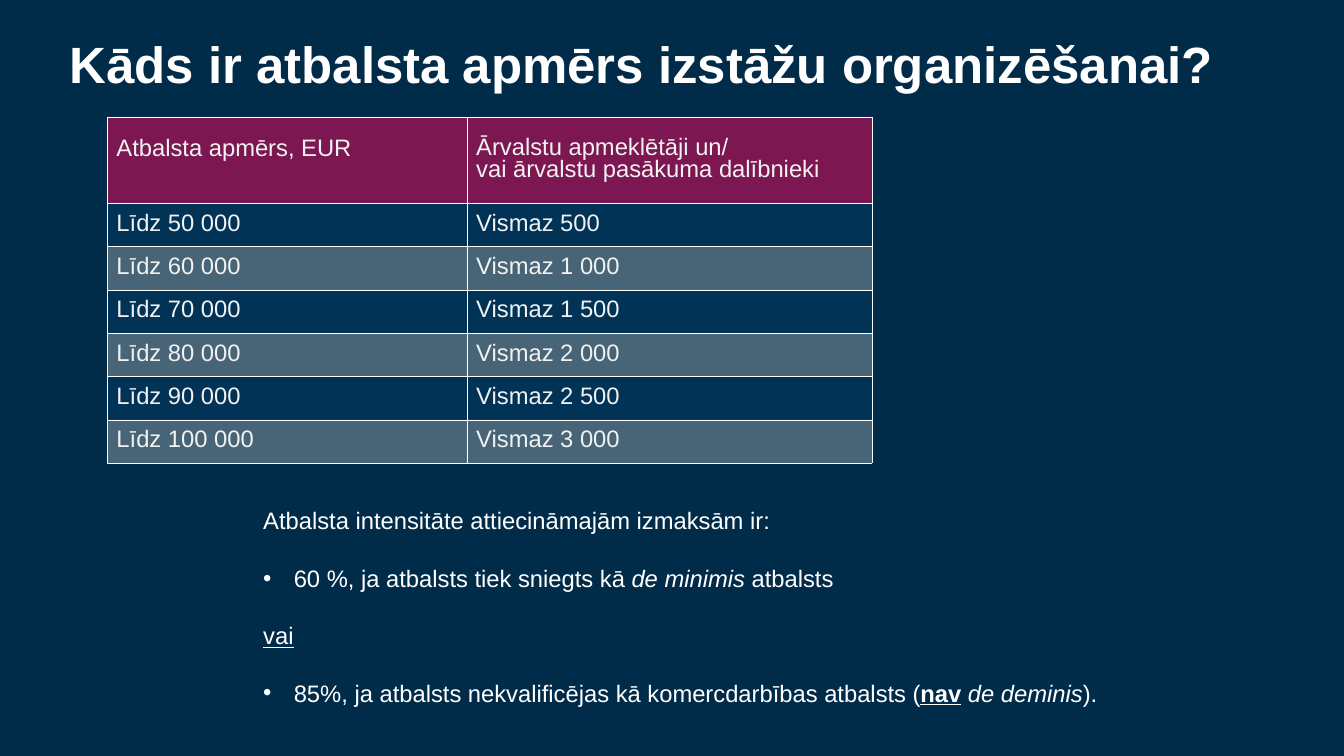
from pptx import Presentation
from pptx.dml.color import RGBColor as RGB
from pptx.enum.text import MSO_ANCHOR as Anchor, MSO_AUTO_SIZE as AutoSize
from pptx.oxml import parse_xml
from pptx.oxml.ns import nsdecls
from pptx.oxml.xmlchemy import OxmlElement
from pptx.util import Cm, Pt

FONT = "Arial"
COLORS = {
    "background": "002B49",
    "header": "7C1752",
    "row": "013356",
    "band": "EEECE1",
    "white": "FFFFFF",
    "cell_text": "F2F2F2",
}
HEADERS = ["Atbalsta apmērs, EUR", "Ārvalstu apmeklētāji un/\nvai ārvalstu pasākuma dalībnieki"]
SUPPORT_LEVELS = [
    ("Līdz 50 000", "Vismaz 500"),
    ("Līdz 60 000", "Vismaz 1 000"),
    ("Līdz 70 000", "Vismaz 1 500"),
    ("Līdz 80 000", "Vismaz 2 000"),
    ("Līdz 90 000", "Vismaz 2 500"),
    ("Līdz 100 000", "Vismaz 3 000"),
]
INTENSITY = [
    (False, [("Atbalsta intensitāte attiecināmajām izmaksām ir:", "")]),
    (True, [("60 %, ja atbalsts tiek sniegts kā ", ""), ("de minimis", "i"), (" atbalsts", "")]),
    (False, [("vai", "u")]),
    (True, [("85%, ja atbalsts nekvalificējas kā komercdarbības atbalsts (", ""),
            ("nav", "bu"), (" ", ""), ("de deminis", "i"), (").", "")]),
]


def rgb(name):
    return RGB.from_string(COLORS[name])


def style_font(font, size, color):
    font.name = FONT
    font.size = Pt(size)
    font.color.rgb = rgb(color)


def set_indent(p, left, first):
    pPr = p._p.get_or_add_pPr()
    pPr.set("marL", str(Cm(left)))
    pPr.set("indent", str(Cm(first)))
    return pPr


def add_textbox(s, left, top, width, height):
    sp = s.shapes.add_textbox(Cm(left), Cm(top), Cm(width), Cm(height))
    tf = sp.text_frame
    tf.word_wrap = True
    tf.auto_size = AutoSize.SHAPE_TO_FIT_TEXT
    return tf


def add_title(s, text):
    tf = add_textbox(s, 2.77, 1.93, 51.21, 2.16)
    tf.margin_left = tf.margin_right = tf.margin_top = tf.margin_bottom = Cm(0.13)
    tf.text = text
    p = tf.paragraphs[0]
    p.line_spacing = 0.7
    font = p.runs[0].font
    style_font(font, 60, "white")
    font.bold = True


def set_borders(cell):
    tcPr = cell._tc.get_or_add_tcPr()
    for i, side in enumerate("LRTB"):
        tcPr.insert(i, parse_xml(
            f'<a:ln{side} {nsdecls("a")} w="{Pt(0.5)}"><a:solidFill>'
            f'<a:srgbClr val="{COLORS["white"]}"/></a:solidFill></a:ln{side}>'))


def set_alpha(cell, percent):
    alpha = OxmlElement("a:alpha")
    alpha.set("val", str(percent * 1000))
    cell._tc.tcPr.find("{*}solidFill/{*}srgbClr").append(alpha)


def fill_cell(cell, text, fill):
    cell.text = text
    cell.vertical_anchor = Anchor.MIDDLE
    cell.margin_left = cell.margin_right = cell.margin_top = cell.margin_bottom = Cm(0.03)
    for p in cell.text_frame.paragraphs:
        set_indent(p, 0, 0.36)
        p.line_spacing = 0.8
        style_font(p.runs[0].font, 28, "cell_text")
    cell.fill.solid()
    cell.fill.fore_color.rgb = rgb(fill)
    if fill == "band":
        set_alpha(cell, 30)
    set_borders(cell)


def add_support_table(s):
    rows = [HEADERS, *SUPPORT_LEVELS]
    frame = s.shapes.add_table(len(rows), 2, Cm(4.45), Cm(4.87), Cm(31.79), Cm(14.37))
    table = frame.table
    table.first_row = table.horz_banding = False
    for column, width in zip(table.columns, (14.95, 16.84)):
        column.width = Cm(width)
    for i, texts in enumerate(rows):
        table.rows[i].height = Cm(1.8 if i else 3.57)
        fill = ("band", "row")[i % 2] if i else "header"
        for j, text in enumerate(texts):
            fill_cell(table.cell(i, j), text, fill)
    table.cell(0, 0).margin_bottom = Cm(0.91)


def add_bullet(p):
    pPr = set_indent(p, 1.27, -1.27)
    for tag, key, value in (("a:buFont", "typeface", FONT), ("a:buChar", "char", "•")):
        bullet = OxmlElement(tag)
        bullet.set(key, value)
        pPr.append(bullet)


def add_intensity(s):
    tf = add_textbox(s, 10.69, 20.9, 35.89, 8.64)
    for i, (bulleted, parts) in enumerate(INTENSITY):
        p = tf.add_paragraph() if i else tf.paragraphs[0]
        if i:
            p.space_before = Pt(34)
        if bulleted:
            add_bullet(p)
        for text, marks in parts:
            r = p.add_run()
            r.text = text
            style_font(r.font, 28, "white")
            r.font.bold = "b" in marks
            r.font.italic = "i" in marks
            r.font.underline = "u" in marks


def main():
    prs = Presentation()
    prs.slide_width, prs.slide_height = Cm(55.85), Cm(31.4)
    s = prs.slides.add_slide(prs.slide_layouts[6])
    s.background.fill.solid()
    s.background.fill.fore_color.rgb = rgb("background")
    add_support_table(s)
    add_title(s, "Kāds ir atbalsta apmērs izstāžu organizēšanai?")
    add_intensity(s)
    prs.save("out.pptx")


if __name__ == "__main__":
    main()
